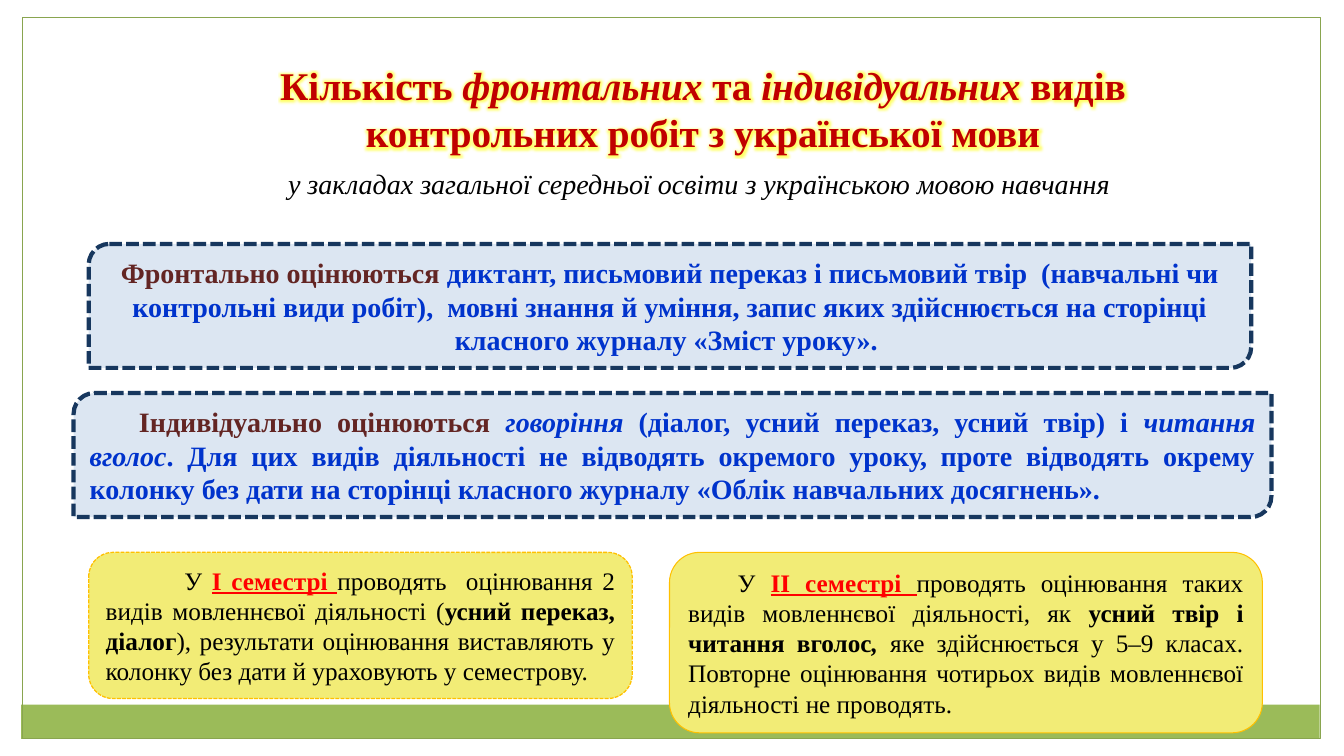
from lxml.etree import SubElement
from pptx import Presentation
from pptx.dml.color import RGBColor
from pptx.enum.dml import MSO_LINE
from pptx.enum.shapes import MSO_SHAPE
from pptx.enum.text import MSO_ANCHOR, MSO_AUTO_SIZE, PP_ALIGN
from pptx.oxml import parse_xml
from pptx.oxml.ns import nsdecls, qn
from pptx.util import Inches, Pt

COLORS = {
    "green": "9BBB59", "frame": "89A54F",
    "pale blue": "DCE6F2", "navy": "17375E", "blue": "0033CC", "brown": "632523",
    "yellow": "F2EC76", "gold": "FFC000", "glow": "FFFF00",
    "dark red": "C00000", "red": "FF0000", "black": "000000",
}
FONT = "Times New Roman"


def color(name):
    return RGBColor.from_string(COLORS[name])


def add_glow(run, name):
    """Outline the letters in their own colour and surround them with a glow."""
    properties = run.font._element
    outline = parse_xml(
        f'<a:ln {nsdecls("a")} w="9525"><a:solidFill>'
        f'<a:srgbClr val="{COLORS[name]}"/></a:solidFill></a:ln>')
    effects = parse_xml(
        f'<a:effectLst {nsdecls("a")}><a:glow rad="63500">'
        f'<a:srgbClr val="{COLORS["glow"]}"><a:alpha val="60000"/></a:srgbClr>'
        '</a:glow></a:effectLst>')
    properties.insert(0, outline)
    properties.find(qn("a:solidFill")).addnext(effects)


def add_paragraph(paragraph, parts, size, name, align=PP_ALIGN.CENTER, indent=0, glow=False):
    """Write (text, format) parts; a format holds bold, italic, underline or color."""
    paragraph.alignment = align
    if indent:
        properties = paragraph._p.get_or_add_pPr()
        properties.set("marL", "0")
        properties.set("indent", str(Inches(indent)))
    for text, style in parts:
        run = paragraph.add_run()
        run.text = text
        font = run.font
        font.name, font.size = FONT, Pt(size)
        font.bold = style.get("bold", False)
        font.italic = style.get("italic", False)
        font.underline = style.get("underline", False)
        font.color.rgb = color(style.get("color", name))
        if glow:
            add_glow(run, name)


def add_text(slide, box, paragraphs, **formats):
    frame = slide.shapes.add_textbox(*map(Inches, box)).text_frame
    frame.word_wrap = True
    frame.auto_size = MSO_AUTO_SIZE.SHAPE_TO_FIT_TEXT
    for index, parts in enumerate(paragraphs):
        paragraph = frame.add_paragraph() if index else frame.paragraphs[0]
        add_paragraph(paragraph, parts, **formats)


def add_box(slide, kind, box, fill=None, line=None, width=0.75, dashed=False):
    shape = slide.shapes.add_shape(kind, *map(Inches, box))
    shape.shadow.inherit = False
    if fill:
        shape.fill.solid()
        shape.fill.fore_color.rgb = color(fill)
    else:
        shape.fill.background()
    if line:
        shape.line.color.rgb = color(line)
        shape.line.width = Pt(width)
        if dashed:
            shape.line.dash_style = MSO_LINE.SQUARE_DOT
    else:
        shape.line.fill.background()
    return shape


def add_card(slide, kind, box, parts, outline, **formats):
    shape = add_box(slide, kind, box, **outline)
    frame = shape.text_frame
    frame.word_wrap = True
    frame.auto_size = MSO_AUTO_SIZE.SHAPE_TO_FIT_TEXT
    frame.vertical_anchor = MSO_ANCHOR.MIDDLE
    add_paragraph(frame.paragraphs[0], parts, **formats)


def main():
    presentation = Presentation()
    presentation.slide_width, presentation.slide_height = Inches(13.33), Inches(7.5)
    slide = presentation.slides.add_slide(presentation.slide_layouts[6])

    bold, plain = {"bold": True}, {}
    bold_italic = {"bold": True, "italic": True}
    lead = {"bold": True, "color": "brown"}
    semester = {"bold": True, "underline": True, "color": "red"}

    # Green band and page frame
    add_box(slide, MSO_SHAPE.RECTANGLE, (0.21, 6.99, 12.88, 0.34), fill="green")
    add_box(slide, MSO_SHAPE.RECTANGLE, (0.22, 0.17, 12.88, 7.16), line="frame")

    # Title and subtitle
    add_text(slide, (0.88, 0.56, 11.69, 1.04), [
        [("Кількість ", bold), ("фронтальних ", bold_italic), ("та ", bold),
         ("індивідуальних ", bold_italic), ("видів ", bold)],
        [("контрольних робіт з української мови ", bold)],
    ], size=28, name="dark red", indent=0.59, glow=True)
    add_text(slide, (0.78, 1.6, 11.79, 0.44), [
        [("у закладах загальної середньої освіти з українською мовою навчання ",
          {"italic": True})],
    ], size=20, name="black", indent=0.59)

    # Blue cards: frontal and individual assessment
    blue_outline = {"fill": "pale blue", "line": "navy", "width": 3, "dashed": True}
    diagonal = MSO_SHAPE.ROUND_2_DIAG_RECTANGLE
    add_card(slide, diagonal, (0.88, 2.42, 11.53, 1.23), [
        ("Фронтально оцінюються ", lead),
        ("диктант, письмовий переказ і письмовий твір  (навчальні чи контрольні види "
         "робіт),  мовні знання й уміння, запис яких здійснюється на сторінці класного "
         "журналу «Зміст уроку». ", bold),
    ], blue_outline, size=20, name="blue")
    add_card(slide, diagonal, (0.73, 3.9, 11.88, 1.23), [
        ("Індивідуально оцінюються ", lead),
        ("говоріння", bold_italic),
        (" (діалог, усний переказ, усний твір) і ", bold),
        ("читання вголос", bold_italic),
        (". Для цих видів діяльності не відводять окремого уроку, проте відводять окрему "
         "колонку без дати на сторінці класного журналу «Облік навчальних досягнень». ",
         bold),
    ], blue_outline, size=20, name="blue", align=PP_ALIGN.JUSTIFY, indent=0.49)

    # Yellow cards: one per semester
    yellow_outline = {"fill": "yellow", "line": "gold"}
    rounded = MSO_SHAPE.ROUNDED_RECTANGLE
    add_card(slide, rounded, (6.64, 5.48, 5.88, 1.79), [
        ("У ", plain), ("ІІ семестрі ", semester),
        ("проводять оцінювання таких видів мовленнєвої діяльності, як ", plain),
        ("усний твір і читання вголос", bold), (", ", bold_italic),
        ("яке здійснюється у 5–9 класах. Повторне оцінювання чотирьох видів "
         "мовленнєвої діяльності не проводять.", plain),
    ], yellow_outline, size=18, name="black", align=PP_ALIGN.JUSTIFY, indent=0.49)
    add_card(slide, rounded, (0.88, 5.48, 5.39, 1.45), [
        ("У ", plain), ("І семестрі ", semester),
        ("проводять  оцінювання 2 видів мовленнєвої діяльності (", plain),
        ("усний переказ, діалог", bold),
        ("), результати оцінювання виставляють у колонку без дати й ураховують у "
         "cеместрову.", plain),
    ], {**yellow_outline, "width": 0.9, "dashed": True},
        size=18, name="black", align=PP_ALIGN.JUSTIFY, indent=0.78)

    presentation.save("out.pptx")


if __name__ == "__main__":
    main()
